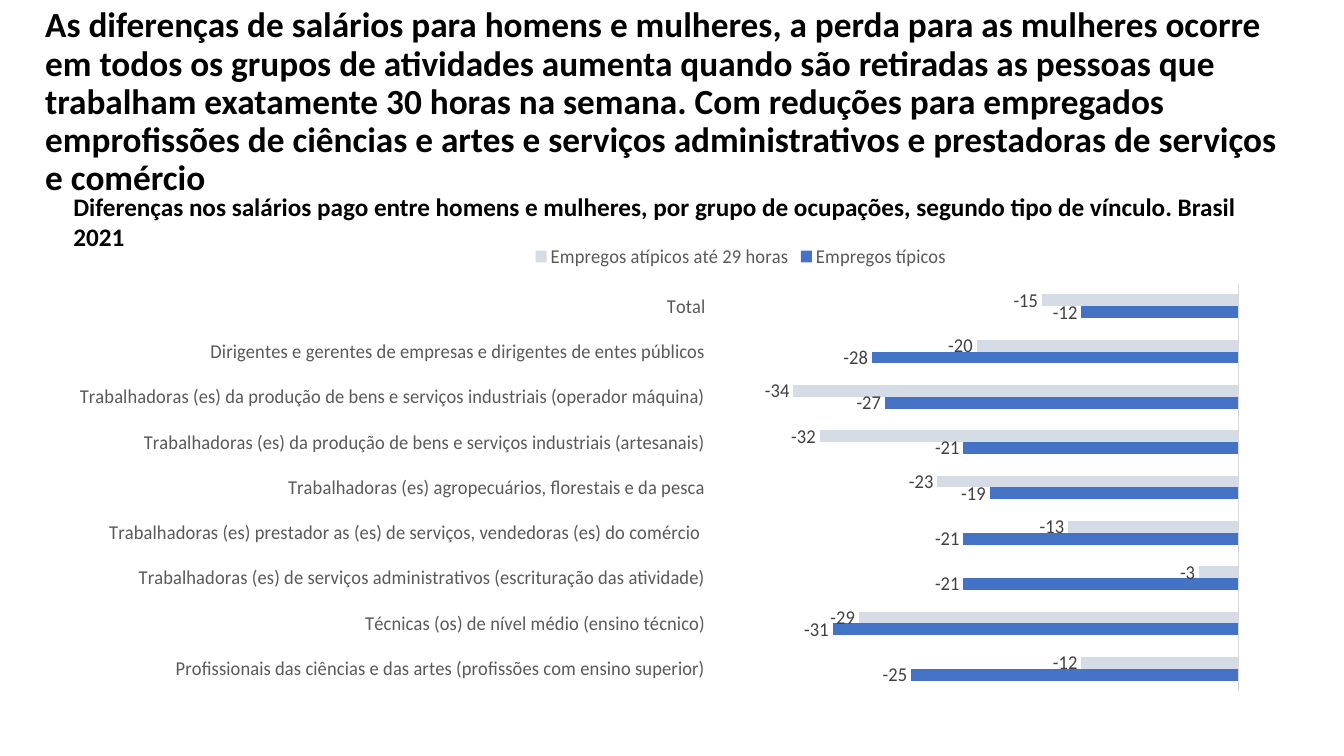
"""Build a slide on the pay gap between women and men by occupation."""
from lxml.etree import SubElement
from pptx import Presentation
from pptx.chart.data import CategoryChartData
from pptx.dml.color import RGBColor
from pptx.enum.chart import (XL_CHART_TYPE, XL_LABEL_POSITION,
                             XL_LEGEND_POSITION, XL_TICK_LABEL_POSITION,
                             XL_TICK_MARK)
from pptx.enum.text import MSO_ANCHOR
from pptx.oxml.ns import qn
from pptx.util import Cm, Pt

FONT = "Calibri"
TITLE = ("As diferenças de salários para homens e mulheres, a perda para as "
         "mulheres ocorre em todos os grupos de atividades aumenta quando são "
         "retiradas as pessoas que trabalham exatamente 30 horas na semana. "
         "Com reduções para empregados emprofissões de ciências e artes e "
         "serviços administrativos e prestadoras de serviços e comércio")
CAPTION = ("Diferenças nos salários pago entre homens e mulheres, por grupo de "
           "ocupações, segundo tipo de vínculo. Brasil 2021")
NAMES = ("Empregos típicos", "Empregos atípicos até 29 horas")
FILLS = ("4472C4", "D6DCE5")
ROWS = [
    ("Profissionais das ciências e das artes (profissões com ensino superior)", -25, -12),
    ("Técnicas (os) de nível médio (ensino técnico)", -31, -29),
    ("Trabalhadoras (es) de serviços administrativos (escrituração das atividade)", -21, -3),
    ("Trabalhadoras (es) prestador as (es) de serviços, vendedoras (es) do comércio ", -21, -13),
    ("Trabalhadoras (es) agropecuários, florestais e da pesca", -19, -23),
    ("Trabalhadoras (es) da produção de bens e serviços industriais (artesanais)", -21, -32),
    ("Trabalhadoras (es) da produção de bens e serviços industriais (operador máquina)", -27, -34),
    ("Dirigentes e gerentes de empresas e dirigentes de entes públicos", -28, -20),
    ("Total", -12, -15),
]
TITLE_BOX = (0.89, 0.48, 31.95, 4.22)
CAPTION_BOX = (1.6, 4.7, 30.66, 2.57)
CHART_BOX = (2.01, 5.94, 29.21, 12.09)
PLOT = {"layoutTarget": "inner", "xMode": "edge", "yMode": "edge",
        "x": 0.52, "y": 0.1, "w": 0.48, "h": 0.85}
KEY = {"xMode": "edge", "yMode": "edge", "x": 0.35, "y": 0.01}


def tint(code):
    return RGBColor.from_string(code)


def style(font, size, code, bold=False):
    font.name, font.size, font.bold = FONT, Pt(size), bold
    font.color.rgb = tint(code)


def write(slide, box, text, size, anchor, gap):
    frame = slide.shapes.add_textbox(*map(Cm, box)).text_frame
    frame.word_wrap = True
    frame.vertical_anchor = anchor
    frame.text = text
    para = frame.paragraphs[0]
    para.line_spacing = gap
    style(para.runs[0].font, size, "000000", True)


def place(layout, rules):
    inner = SubElement(layout, qn("c:manualLayout"))
    for name, value in rules.items():
        SubElement(inner, qn("c:" + name)).set("val", str(value))


def draw(slide):
    data = CategoryChartData(number_format="0")
    labels, *columns = zip(*ROWS)
    data.categories = labels
    for name, values in zip(NAMES, columns):
        data.add_series(name, values)
    chart = slide.shapes.add_chart(
        XL_CHART_TYPE.BAR_CLUSTERED, *map(Cm, CHART_BOX), data).chart
    chart.has_title = False
    style(chart.font, 14, "000000")

    chart.has_legend = True
    legend = chart.legend
    legend.position = XL_LEGEND_POSITION.TOP
    legend.include_in_layout = False
    style(legend.font, 14, "595959")

    cats = chart.category_axis
    cats.tick_label_position = XL_TICK_LABEL_POSITION.LOW
    cats.major_tick_mark = cats.minor_tick_mark = XL_TICK_MARK.NONE
    cats.has_major_gridlines = False
    cats.format.line.color.rgb = tint("D9D9D9")
    cats.format.line.width = Pt(0.75)
    style(cats.tick_labels.font, 14, "595959")
    scale = chart.value_axis
    scale.minimum_scale, scale.maximum_scale = -40, 0
    scale.has_major_gridlines = False
    scale.visible = False

    plot = chart.plots[0]
    plot.gap_width = 182
    plot.vary_by_categories = False
    for series, code in zip(plot.series, FILLS):
        series.invert_if_negative = False
        series.format.fill.solid()
        series.format.fill.fore_color.rgb = tint(code)
        marks = series.data_labels
        marks.show_value = True
        marks.number_format = "#,##0"
        marks.number_format_is_linked = False
        marks.position = XL_LABEL_POSITION.OUTSIDE_END
        style(marks.font, 14, "404040")

    area = chart._chartSpace.chart.plotArea
    spot = area.find(qn("c:layout"))
    if spot is None:
        spot = SubElement(area, qn("c:layout"))
        area.insert(0, spot)
    place(spot, PLOT)
    root = legend._element
    spot = root.find(qn("c:layout"))
    if spot is None:
        spot = SubElement(root, qn("c:layout"))
        root.find(qn("c:legendPos")).addnext(spot)
    place(spot, KEY)


def main():
    deck = Presentation()
    deck.slide_width, deck.slide_height = Cm(33.87), Cm(19.05)
    slide = deck.slides.add_slide(deck.slide_layouts[6])
    write(slide, TITLE_BOX, TITLE, 25.2, MSO_ANCHOR.MIDDLE, 0.9)
    draw(slide)
    write(slide, CAPTION_BOX, CAPTION, 18, MSO_ANCHOR.TOP, 1.0)
    deck.save("out.pptx")


if __name__ == "__main__":
    main()
